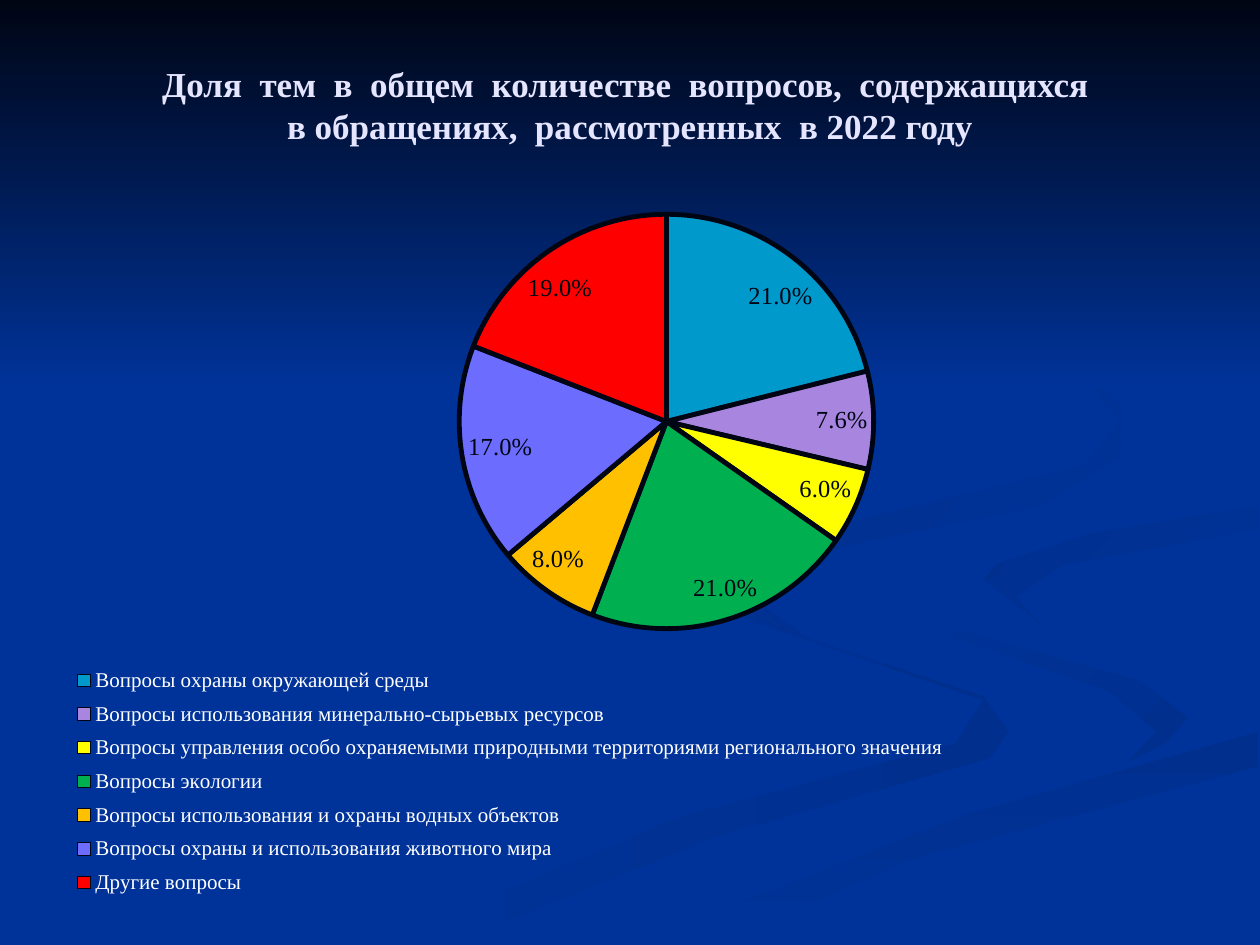
"""Builds a slide with a pie chart of the topics raised in appeals in 2022."""
from lxml.etree import SubElement
from pptx import Presentation
from pptx.chart.data import CategoryChartData
from pptx.dml.color import RGBColor
from pptx.enum.chart import XL_CHART_TYPE as ChartType, XL_LABEL_POSITION as LabelPosition
from pptx.enum.chart import XL_LEGEND_POSITION as LegendPosition
from pptx.enum.shapes import MSO_SHAPE as Preset
from pptx.enum.text import MSO_ANCHOR as Anchor, PP_ALIGN as Align
from pptx.oxml.ns import qn
from pptx.util import Pt

FONT = "Times New Roman"
COLORS = {"blue": "003399", "shade": "002F8E", "night": "000514",
          "title": "E5E5FF", "white": "FFFFFF"}

TOPICS = [
    ("Вопросы охраны окружающей среды", 0.21, "0099CC"),
    ("Вопросы использования минерально-сырьевых ресурсов", 0.076, "A886E0"),
    ("Вопросы управления особо охраняемыми природными территориями регионального значения",
     0.06, "FFFF00"),
    ("Вопросы экологии", 0.21, "00B050"),
    ("Вопросы использования и охраны водных объектов", 0.08, "FFC000"),
    ("Вопросы охраны и использования животного мира", 0.17, "6C6CFF"),
    ("Другие вопросы", 0.19, "FF0000"),
]

SWIRLS = [
    ("blue", "shade", 0, [
        (562, 398), (462, 365), (414, 330), (427, 354), (562, 400), (546, 425),
        (388, 467), (216, 539), (260, 539), (406, 479), (566, 433), (576, 418)]),
    ("blue", "shade", 45, [
        (679, 410), (652, 389), (546, 359), (521, 334), (544, 364), (634, 395),
        (661, 418), (644, 436), (678, 418)]),
    ("shade", "blue", 90, [
        (362, 539), (411, 539), (520, 491), (719, 438), (719, 418), (550, 466),
        (431, 508)]),
    ("blue", "blue", 0, [
        (522, 334), (546, 359), (652, 389), (679, 410), (662, 430), (477, 481),
        (343, 539), (362, 539), (550, 466), (719, 418), (719, 387), (611, 362),
        (563, 331), (623, 305), (719, 289), (719, 279), (554, 307)]),
    ("shade", "blue", 45, [
        (562, 331), (595, 357), (580, 341), (607, 323), (719, 302), (719, 289),
        (623, 305), (570, 322)]),
    ("shade", "blue", 45, [
        (492, 310), (594, 289), (640, 261), (641, 233), (607, 198), (549, 168),
        (609, 201), (640, 241), (620, 266), (487, 298), (418, 325), (420, 345),
        (448, 360), (427, 338), (449, 320)]),
]


def paint_gradient(shape, start, end, angle):
    shape.shadow.inherit = False
    shape.line.fill.background()
    shape.fill.gradient()
    shape.fill.gradient_angle = (360 - angle) % 360
    for stop, color in zip(shape.fill.gradient_stops, (start, end)):
        stop.color.rgb = RGBColor.from_string(COLORS[color])


def place(element, **settings):
    for old in element.findall(qn("c:layout")):
        element.remove(old)
    layout = SubElement(element, qn("c:layout"))
    manual = SubElement(layout, qn("c:manualLayout"))
    for name, value in settings.items():
        SubElement(manual, qn(f"c:{name}")).set("val", str(value))
    return layout


deck = Presentation()
deck.slide_width, deck.slide_height = Pt(720), Pt(540)
page = deck.slides.add_slide(deck.slide_layouts[5])
page.background.fill.solid()
page.background.fill.fore_color.rgb = RGBColor.from_string(COLORS["blue"])

for start, end, angle, points in SWIRLS:
    builder = page.shapes.build_freeform(*points[0], scale=Pt(1))
    builder.add_line_segments(points[1:], close=True)
    paint_gradient(builder.convert_to_shape(), start, end, angle)

sky = page.shapes.add_shape(Preset.RECTANGLE, 0, 0, Pt(720), Pt(222))
paint_gradient(sky, "night", "blue", 90)

title = page.shapes.title
title._element.getparent().append(title._element)
title.left, title.top, title.width, title.height = Pt(36), Pt(15), Pt(648), Pt(90)
frame = title.text_frame
frame.text = ("Доля  тем  в  общем  количестве  вопросов,  содержащихся \v"
              "в обращениях,  рассмотренных  в 2022 году")
frame.vertical_anchor = Anchor.MIDDLE
frame.paragraphs[0].alignment = Align.CENTER
for span in frame.paragraphs[0].runs:
    span.font.name, span.font.size, span.font.bold = FONT, Pt(20), True
    span.font.color.rgb = RGBColor.from_string(COLORS["title"])

data = CategoryChartData(number_format="0.0%")
data.categories = [name for name, share, color in TOPICS]
data.add_series("Доля тем", [share for name, share, color in TOPICS])
chart = page.shapes.add_chart(ChartType.PIE, Pt(25), Pt(110), Pt(659), Pt(415.5), data).chart
chart.has_title = False
chart.has_legend = True
chart.legend.position = LegendPosition.BOTTOM
chart.legend.include_in_layout = False

plot = chart.plots[0]
plot.vary_by_categories = True
plot.has_data_labels = True
labels = plot.data_labels
labels.show_value, labels.show_percentage = True, False
labels.number_format, labels.number_format_is_linked = "0.0%", False
labels.position = LabelPosition.BEST_FIT

for font, size, color in [(chart.font, 10, "white"), (chart.legend.font, 12, "white"),
                          (labels.font, 14, "night")]:
    font.name, font.size = FONT, Pt(size)
    font.color.rgb = RGBColor.from_string(COLORS[color])

for index, (name, share, color) in enumerate(TOPICS):
    wedge = plot.series[0].points[index].format
    wedge.fill.solid()
    wedge.fill.fore_color.rgb = RGBColor.from_string(color)
    wedge.line.color.rgb = RGBColor.from_string(COLORS["night"])
    wedge.line.width = Pt(2.75)

plot_area = chart._chartSpace.chart.plotArea
plot_area.insert(0, place(plot_area, layoutTarget="inner", xMode="edge", yMode="edge",
                          x=0.09, y=0.03, w=0.9, h=0.57))
legend = chart.legend._element
legend.find(qn("c:legendPos")).addnext(
    place(legend, xMode="edge", yMode="edge", x=0.02, y=0.64, w=0.77, h=0.34))

deck.save("out.pptx")
